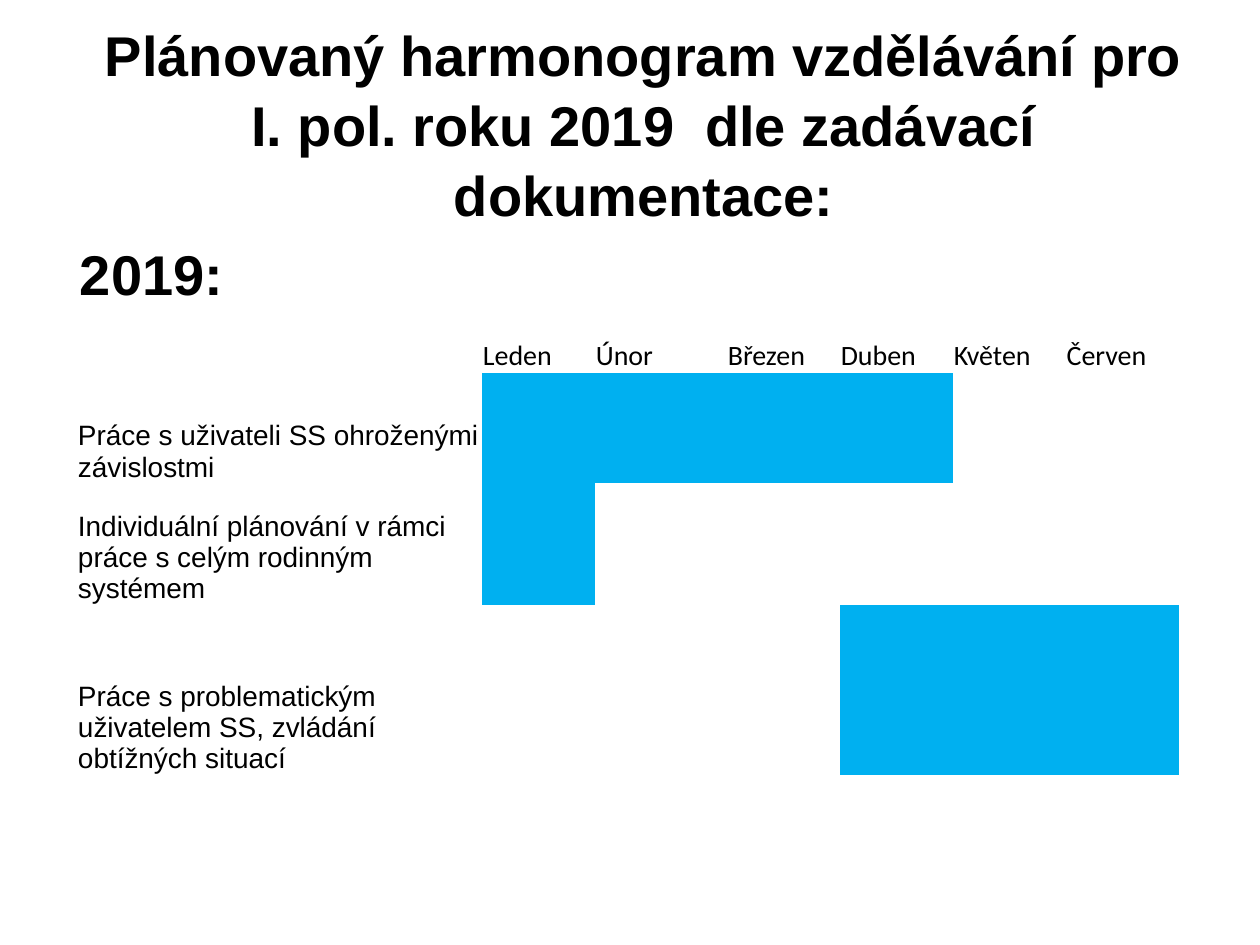
from dataclasses import dataclass

from pptx import Presentation
from pptx.dml.color import RGBColor
from pptx.enum.text import MSO_ANCHOR as ANCHOR, PP_ALIGN as ALIGN
from pptx.oxml.ns import qn
from pptx.util import Emu, Pt


@dataclass(frozen=True)
class Theme:
    text: RGBColor = RGBColor(0x00, 0x00, 0x00)
    bar: RGBColor = RGBColor(0x00, 0xB0, 0xF0)
    heading_font: str = "Arial"
    month_font: str = "Calibri"
    heading_size: int = 32
    table_size: int = 16
    plain_table: str = "{2D5ABB26-0587-4C30-8999-92F81FD0307C}"


def px(n):
    return Emu(round(n * 914400 / 126))


class SlideBuilder:
    def __init__(self, slide, theme):
        self.s = slide
        self.theme = theme

    def style(self, p, font, size, bold=False):
        for r in p.runs:
            r.font.name = font
            r.font.size = Pt(size)
            r.font.bold = bold
            r.font.color.rgb = self.theme.text

    def heading(self, text, box, insets, align, anchor):
        tf = self.s.shapes.add_textbox(*map(px, box)).text_frame
        tf.word_wrap = True
        tf.vertical_anchor = anchor
        tf.margin_left, tf.margin_top, tf.margin_right, tf.margin_bottom = map(px, insets)
        tf.text = text
        p = tf.paragraphs[0]
        p.alignment = align
        p.line_spacing = 1.04
        self.style(p, self.theme.heading_font, self.theme.heading_size, True)

    def cell(self, cell, text, font, filled):
        cell.margin_left = cell.margin_top = cell.margin_right = px(1)
        cell.margin_bottom = 0
        cell.vertical_anchor = ANCHOR.BOTTOM
        if filled:
            cell.fill.solid()
            cell.fill.fore_color.rgb = self.theme.bar
        else:
            cell.fill.background()
        cell.text = text
        self.style(cell.text_frame.paragraphs[0], font, self.theme.table_size)

    def schedule(self, x, y, widths, heights, months, courses):
        frame = self.s.shapes.add_table(len(heights), len(widths), px(x), px(y),
                                        px(sum(widths)), px(sum(heights)))
        table = frame.table
        table.first_row = table.horz_banding = False
        table._tbl.tblPr.find(qn("a:tableStyleId")).text = self.theme.plain_table
        for col, width in zip(table.columns, widths):
            col.width = px(width)
        for row, height in zip(table.rows, heights):
            row.height = px(height)

        # Month names
        for c, month in enumerate([""] + months):
            self.cell(table.cell(0, c), month, self.theme.month_font, False)

        # One row per course, with the planned months filled
        for r, (name, first, last) in enumerate(courses, 1):
            for c in range(len(widths)):
                self.cell(table.cell(r, c), "" if c else name,
                          self.theme.heading_font, first <= c <= last)


def main():
    prs = Presentation()
    prs.slide_width, prs.slide_height = px(1260), px(945)
    b = SlideBuilder(prs.slides.add_slide(prs.slide_layouts[6]), Theme())

    # Title and year
    b.heading("Plánovaný harmonogram vzdělávání pro I. pol. roku 2019  dle zadávací dokumentace:",
              (77, 35, 1134, 220), (13, 13, 13, 57), ALIGN.CENTER, ANCHOR.MIDDLE)
    b.heading("2019:", (63, 220, 1134, 624), (17, 17, 13, 13), ALIGN.LEFT, ANCHOR.TOP)

    # Schedule: course, first month, last month
    months = ["Leden", "Únor", "Březen", "Duben", "Květen", "Červen"]
    courses = [
        ("Práce s uživateli SS ohroženými závislostmi", 1, 4),
        ("Individuální plánování v rámci práce s celým rodinným systémem", 1, 1),
        ("Práce s problematickým uživatelem SS, zvládání obtížných situací", 4, 6),
    ]
    b.schedule(77, 324, [405, 113, 132] + [113] * 4, [49, 110, 122, 170], months, courses)

    prs.save("out.pptx")


if __name__ == "__main__":
    main()
